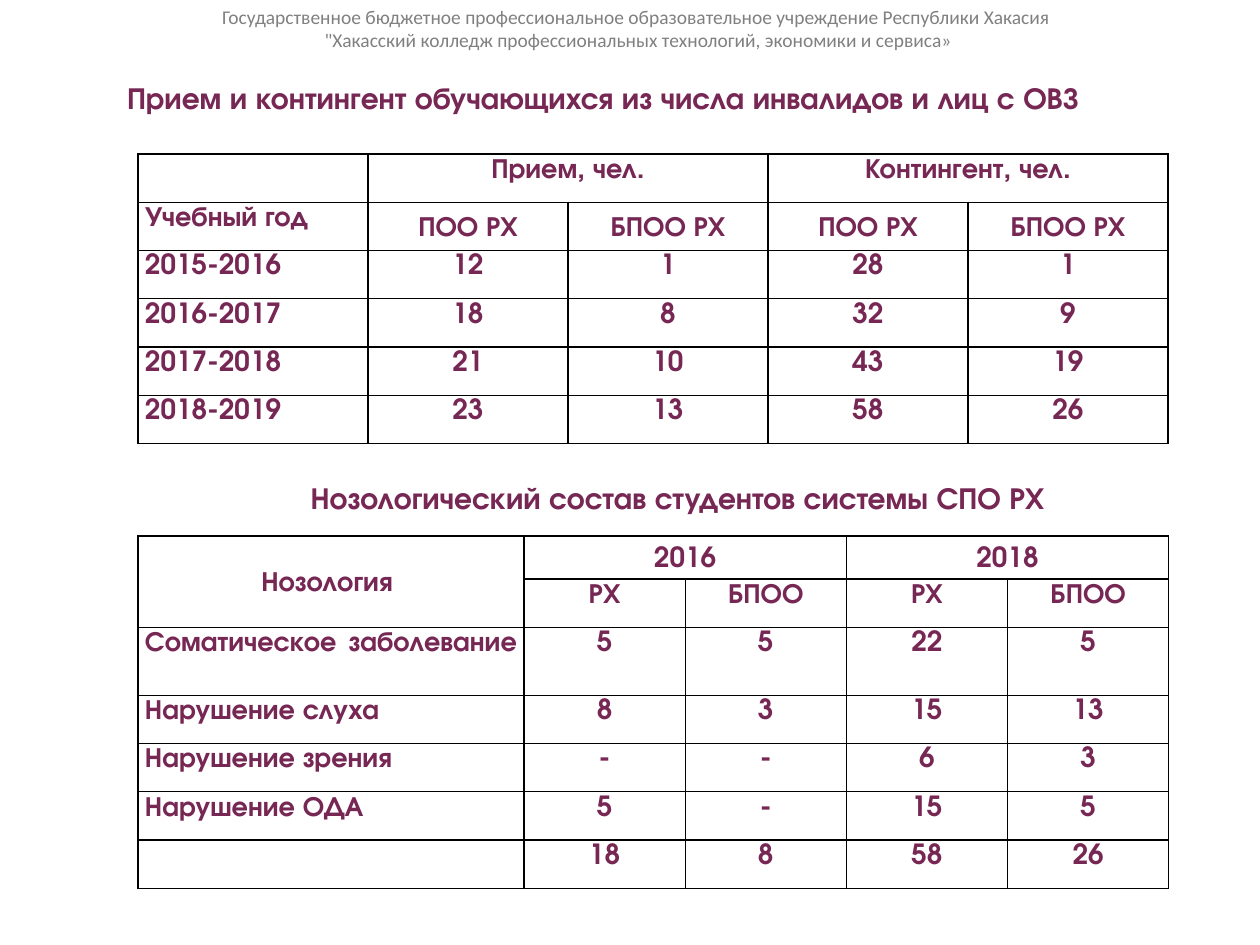
"""Builds the slide on admission and enrolment of students with disabilities."""
import pptx
import pptx.util
import pptx.dml.color
import pptx.enum.text
import pptx.oxml

Inches = pptx.util.Inches
ALIGN = pptx.enum.text.PP_ALIGN
ANCHOR = pptx.enum.text.MSO_ANCHOR
FACE, PLUM = "TeX Gyre Adventor", "772754"
NS = "http://schemas.openxmlformats.org/drawingml/2006/main"


def style(frame, size, face, color, bold, align, space):
    for para in frame.paragraphs:
        para.alignment = align
        para.line_spacing = space
        for run in para.runs:
            run.font.size = pptx.util.Pt(size)
            run.font.name = face
            run.font.bold = bold
            run.font.color.rgb = pptx.dml.color.RGBColor.from_string(color)


deck = pptx.Presentation()
deck.slide_width, deck.slide_height = Inches(12.6), Inches(9.45)
slide = deck.slides.add_slide(deck.slide_layouts[5])

school = slide.shapes.add_textbox(Inches(0.33), 0, Inches(12.11), Inches(0.57))
school.text_frame.text = (
    "Государственное бюджетное профессиональное образовательное учреждение Республики Хакасия \n"
    "\"Хакасский колледж профессиональных технологий, экономики и сервиса»"
)
school.text_frame.word_wrap = True
style(school.text_frame, 14, "Calibri", "808080", False, ALIGN.CENTER, 1.0)

title = slide.shapes.title
lower = slide.shapes.add_textbox(0, 0, Inches(1), Inches(1))
heads = [
    (title, 0.68, 0.68, 11.7, ALIGN.JUSTIFY,
     "Прием и контингент обучающихся из числа инвалидов и лиц с ОВЗ"),
    (lower, 1.52, 4.69, 10.02, ALIGN.CENTER,
     "Нозологический состав студентов системы СПО РХ"),
]
for shape, left, top, width, align, text in heads:
    shape.left, shape.top = Inches(left), Inches(top)
    shape.width, shape.height = Inches(width), Inches(0.49)
    frame = shape.text_frame
    frame.text = text
    frame.word_wrap = True
    frame.vertical_anchor = ANCHOR.TOP
    frame.auto_size = pptx.enum.text.MSO_AUTO_SIZE.SHAPE_TO_FIT_TEXT
    style(frame, 22, FACE, PLUM, True, align, 1.15)
    props = frame.paragraphs[0]._p.get_or_add_pPr()
    props.set("marL", "0")
    props.set("indent", str(Inches(0.49)))

intake = [
    ["", "Прием, чел.", "", "Контингент, чел.", ""],
    ["Учебный год", "ПОО РХ", "БПОО РХ", "ПОО РХ", "БПОО РХ"],
    ["2015-2016 ", "12", "1", "28", "1"],
    ["2016-2017 ", "18", "8", "32", "9"],
    ["2017-2018", "21", "10", "43", "19"],
    ["2018-2019", "23", "13", "58", "26"],
]
illness = [
    ["Нозология ", "2016", "", "2018", ""],
    ["", "РХ", "БПОО", "РХ", "БПОО"],
    ["Соматическое заболевание ", "5", "5", "22", "5"],
    ["Нарушение слуха", "8", "3", "15", "13"],
    ["Нарушение зрения", "-", "-", "6", "3"],
    ["Нарушение ОДА", "5", "-", "15", "5"],
    ["", "18", "8", "58", "26"],
]
middle = {
    "intake": [(1, col) for col in range(1, 5)],
    "illness": [(0, 0), (0, 1), (0, 3)],
}
grids = [
    ("intake", intake, 1.54, 2.3, 2.0, [0.483] * 6),
    ("illness", illness, 5.36, 3.86, 1.612, [0.43, 0.483, 0.68] + [0.483] * 4),
]
for name, data, top, first, other, highs in grids:
    holder = slide.shapes.add_table(
        len(data), 5, Inches(1.38), Inches(top), Inches(10.31), Inches(sum(highs)))
    table = holder.table
    table.first_row = table.horz_banding = False
    for col, width in zip(table.columns, [first] + [other] * 4):
        col.width = Inches(width)
    for row, high in zip(table.rows, highs):
        row.height = Inches(high)
    for r, line in enumerate(data):
        for c, text in enumerate(line):
            cell = table.cell(r, c)
            cell.text_frame.text = text
            cell.margin_left = cell.margin_right = Inches(0.07)
            cell.margin_top = cell.margin_bottom = 0
            mid = (r, c) in middle[name]
            cell.vertical_anchor = ANCHOR.MIDDLE if mid else ANCHOR.TOP
            align = ALIGN.JUSTIFY if c == 0 and r > 0 else ALIGN.CENTER
            style(cell.text_frame, 20, FACE, PLUM, True, align, 1.15)
            props = cell._tc.get_or_add_tcPr()
            for side in "LRTB":
                props.append(pptx.oxml.parse_xml(
                    f'<a:ln{side} xmlns:a="{NS}" w="12700"><a:solidFill>'
                    f'<a:srgbClr val="000000"/></a:solidFill></a:ln{side}>'))
            cell.fill.background()
    for c in (1, 3):
        table.cell(0, c).merge(table.cell(0, c + 1))
    if name == "illness":
        table.cell(0, 0).merge(table.cell(1, 0))

deck.save("out.pptx")
